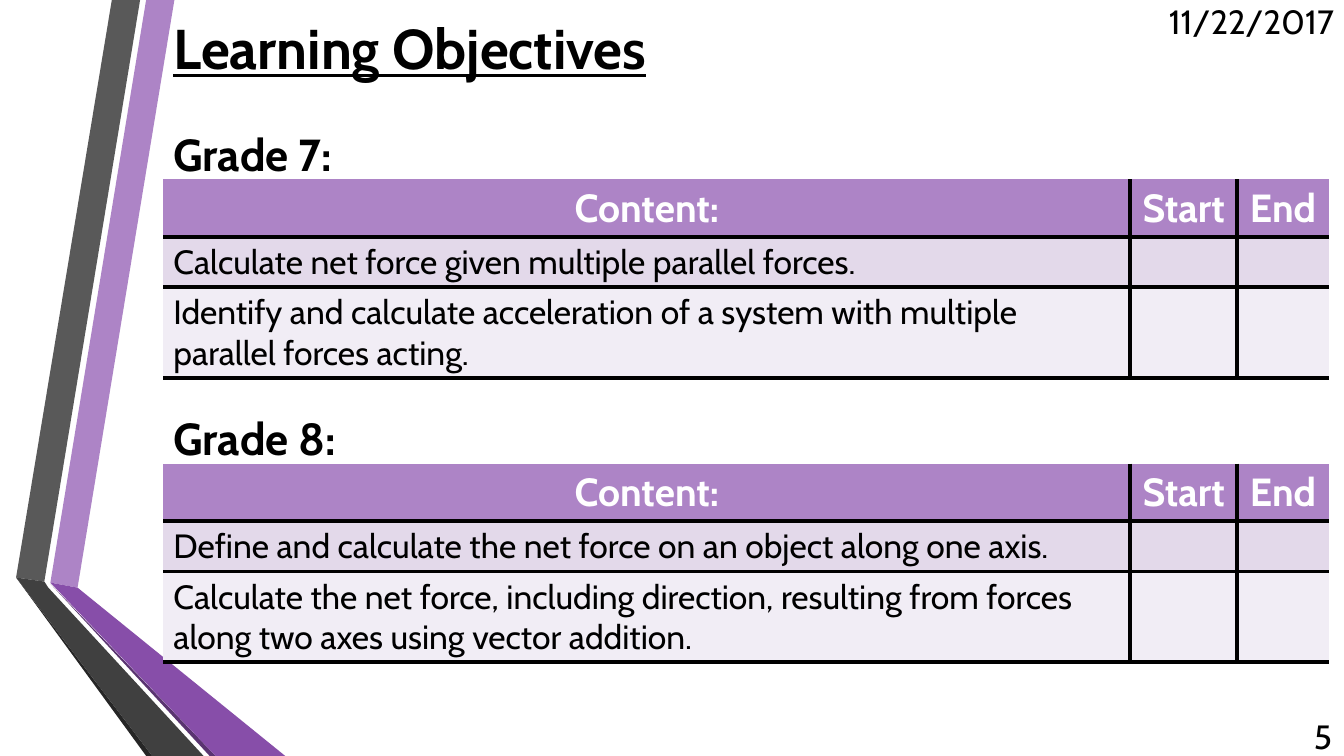
"""Build the Learning Objectives slide with two grade tables."""
import pptx
import pptx.util
import pptx.dml.color
import pptx.enum.text
import pptx.oxml
import pptx.oxml.ns

Inches = pptx.util.Inches
Pt = pptx.util.Pt
RGBColor = pptx.dml.color.RGBColor
ALIGN = pptx.enum.text.PP_ALIGN
ANCHOR = pptx.enum.text.MSO_ANCHOR
FIT = pptx.enum.text.MSO_AUTO_SIZE

BLACK = RGBColor(0x00, 0x00, 0x00)
WHITE = RGBColor(0xFF, 0xFF, 0xFF)
LILAC = RGBColor(0xAD, 0x84, 0xC6)
VIOLET = RGBColor(0x87, 0x4E, 0xA9)
PLUM = RGBColor(0x5A, 0x34, 0x71)
PALE = RGBColor(0xE3, 0xD9, 0xEA)
MIST = RGBColor(0xF1, 0xED, 0xF5)
GRAY = RGBColor(0x59, 0x59, 0x59)
COAL = RGBColor(0x40, 0x40, 0x40)
INK = RGBColor(0x26, 0x26, 0x26)

NO_STYLE = "{2D5ABB26-0587-4C30-8999-92F81FD0307C}"
LEFT = 1.62

HEAD = {"size": Pt(28), "bold": True}
BODY = {"size": Pt(24), "bold": False}
GRADE = {"size": Pt(32), "bold": True}
TITLE = {"size": Pt(40), "bold": True, "underline": True}


def write(frame, text, look, color=BLACK, align=ALIGN.LEFT):
    para = frame.paragraphs[0]
    para.alignment = align
    run = para.add_run()
    run.text = text
    for key, value in {"name": "Cabin", **look}.items():
        setattr(run.font, key, value)
    run.font.color.rgb = color


def add_label(text, box, look, align=ALIGN.LEFT, wrap=True):
    frame = slide.shapes.add_textbox(*map(Inches, box)).text_frame
    frame.word_wrap = wrap
    frame.auto_size = FIT.NONE if wrap else FIT.SHAPE_TO_FIT_TEXT
    frame.vertical_anchor = ANCHOR.MIDDLE if wrap else ANCHOR.TOP
    write(frame, text, look, align=align)


deck = pptx.Presentation()
deck.slide_width = Inches(13.33)
deck.slide_height = Inches(7.5)
slide = deck.slides.add_slide(deck.slide_layouts[5])

bands = [
    (LILAC, [(0.5, 5.78), (0.77, 5.83), (1.73, 0), (1.45, 0)]),
    (GRAY, [(1.39, 0), (1.11, 0), (0.16, 5.73), (0.44, 5.77)]),
    (INK, [(0.16, 5.73), (1.45, 7.5), (1.51, 7.5)]),
    (PLUM, [(0.5, 5.79), (2.08, 7.5), (2.14, 7.5)]),
    (VIOLET, [(0.5, 5.78), (2.14, 7.5), (2.83, 7.5), (0.77, 5.83)]),
    (COAL, [(2.02, 7.5), (0.48, 5.83), (0.44, 5.77), (0.16, 5.73), (1.51, 7.5)]),
]
for color, points in bands:
    start, *rest = [(Inches(x), Inches(y)) for x, y in points]
    pen = slide.shapes.build_freeform(*start)
    pen.add_line_segments(rest, close=True)
    band = pen.convert_to_shape()
    band.shadow.inherit = False
    band.fill.solid()
    band.fill.fore_color.rgb = color
    band.line.fill.background()

title = slide.shapes.title
place = {"left": LEFT, "top": 0.01, "width": 10.96, "height": 0.92}
for key, value in place.items():
    setattr(title, key, Inches(value))
title.text_frame.auto_size = FIT.NONE
title.text_frame.vertical_anchor = ANCHOR.MIDDLE
write(title.text_frame, "Learning Objectives", TITLE)

add_label("11/22/2017", (11.29, 0.01, 2.04, 0.4), BODY, ALIGN.RIGHT)
add_label("5", (12.58, 7.1, 0.73, 0.4), BODY, ALIGN.RIGHT)

grades = [
    ("Grade 7:", 1.78, [
        "Calculate net force given multiple parallel forces.",
        "Identify and calculate acceleration of a system with multiple "
        "parallel forces acting.",
    ]),
    ("Grade 8:", 4.6, [
        "Define and calculate the net force on an object along one axis.",
        "Calculate the net force, including direction, resulting from forces "
        "along two axes using vector addition.",
    ]),
]
widths = [9.59, 1.06, 0.91]
heights = [0.57, 0.5, 0.9]
fills = [LILAC, PALE, MIST]

for grade, top, goals in grades:
    add_label(grade, (LEFT, top - 0.57, 1.84, 0.64), GRADE, wrap=False)
    grid = slide.shapes.add_table(
        3, 3, Inches(LEFT), Inches(top), Inches(sum(widths)), Inches(sum(heights))
    ).table
    grid._tbl.tblPr.find(pptx.oxml.ns.qn("a:tableStyleId")).text = NO_STYLE
    for column, width in zip(grid.columns, widths):
        column.width = Inches(width)
    rows = [["Content:", "Start", "End"]] + [[goal, "", ""] for goal in goals]
    for r, texts in enumerate(rows):
        grid.rows[r].height = Inches(heights[r])
        for c, text in enumerate(texts):
            cell = grid.cell(r, c)
            sides = {"lnL": c > 0, "lnR": c < 2, "lnT": r > 0, "lnB": True}
            for side, shown in sides.items():
                if shown:
                    cell._tc.get_or_add_tcPr().append(pptx.oxml.parse_xml(
                        f'<a:{side} {pptx.oxml.ns.nsdecls("a")} w="{Pt(3)}">'
                        f'<a:solidFill><a:srgbClr val="{BLACK}"/></a:solidFill>'
                        f"</a:{side}>"
                    ))
            cell.fill.solid()
            cell.fill.fore_color.rgb = fills[r]
            if r == 0:
                cell.vertical_anchor = ANCHOR.MIDDLE
                write(cell.text_frame, text, HEAD, WHITE, ALIGN.CENTER)
            elif text:
                write(cell.text_frame, text, BODY)

deck.save("out.pptx")
